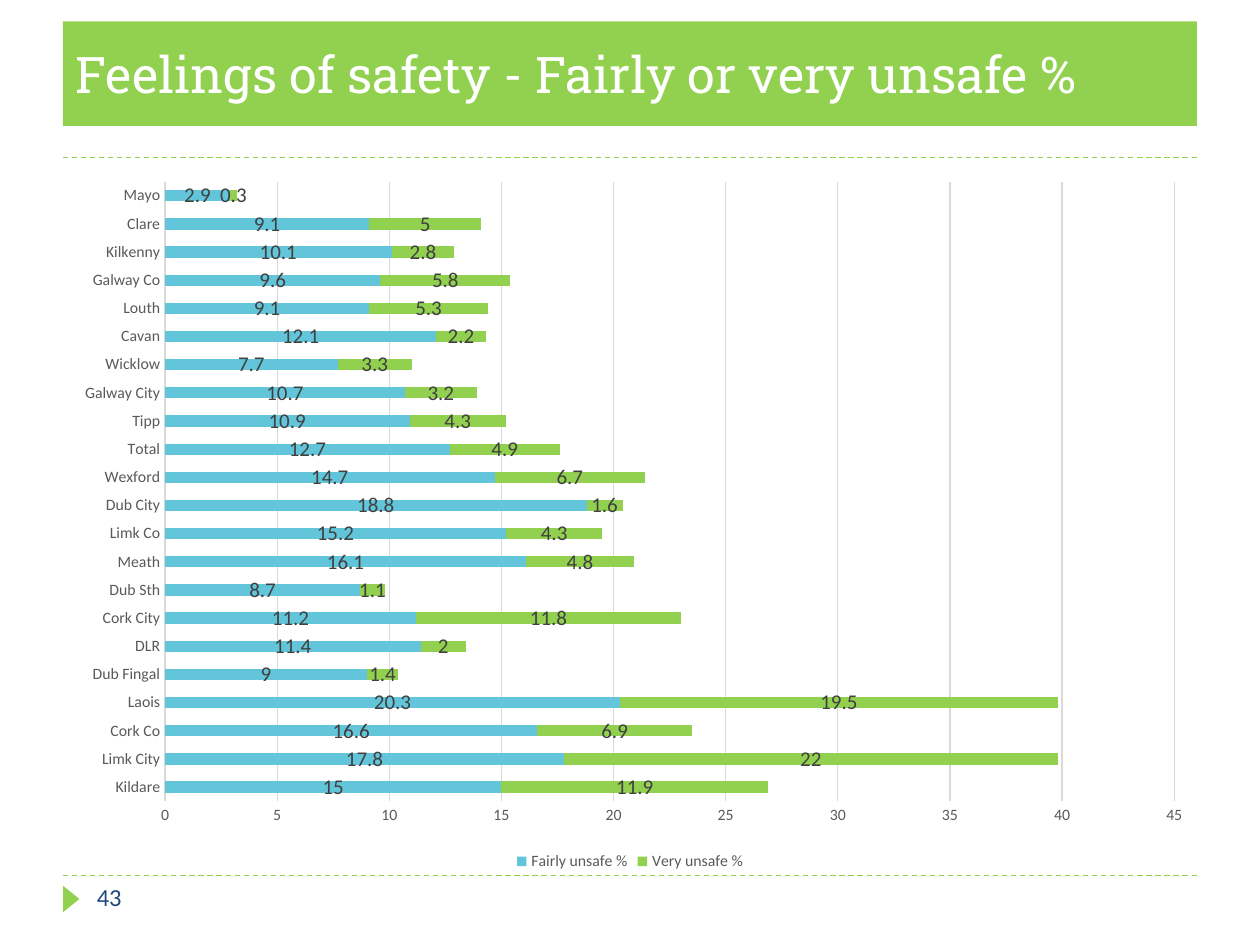
"""Build the slide on feelings of safety by county."""
from typing import NamedTuple

from lxml import etree
from pptx import Presentation
from pptx import util as u
from pptx.chart import data as cd
from pptx.dml import color as col
from pptx.enum import chart as ch, dml, shapes, text
from pptx.oxml import ns

GREEN, BLUE, GREY, PALE = "92D050", "63C5DA", "595959", "D9D9D9"
LEFT, WIDTH = 0.5, 9


class Box(NamedTuple):
    left: float
    top: float
    width: float
    height: float

    def inches(self) -> list:
        return [u.Inches(side) for side in self]


class County(NamedTuple):
    name: str
    fairly: float
    very: float


class Series(NamedTuple):
    name: str
    field: str
    color: str


COUNTIES = [
    County("Kildare", 15, 11.9),
    County("Limk City", 17.8, 22),
    County("Cork Co", 16.6, 6.9),
    County("Laois", 20.3, 19.5),
    County("Dub Fingal", 9, 1.4),
    County("DLR", 11.4, 2),
    County("Cork City", 11.2, 11.8),
    County("Dub Sth", 8.7, 1.1),
    County("Meath", 16.1, 4.8),
    County("Limk Co", 15.2, 4.3),
    County("Dub City", 18.8, 1.6),
    County("Wexford", 14.7, 6.7),
    County("Total", 12.7, 4.9),
    County("Tipp", 10.9, 4.3),
    County("Galway City", 10.7, 3.2),
    County("Wicklow", 7.7, 3.3),
    County("Cavan", 12.1, 2.2),
    County("Louth", 9.1, 5.3),
    County("Galway Co", 9.6, 5.8),
    County("Kilkenny", 10.1, 2.8),
    County("Clare", 9.1, 5),
    County("Mayo", 2.9, 0.3),
]
SERIES = [
    Series("Fairly unsafe %", "fairly", BLUE),
    Series("Very unsafe %", "very", GREEN),
]
PLOT = {"x": 0.09, "y": 0.02, "w": 0.89, "h": 0.875}


def rgb(code: str) -> col.RGBColor:
    return col.RGBColor.from_string(code)


def set_font(font, size: float, color: str, name: str = "Calibri") -> None:
    font.size, font.name, font.bold = u.Pt(size), name, False
    font.color.rgb = rgb(color)


def set_line(line, color: str) -> None:
    line.color.rgb = rgb(color)
    line.width = u.Pt(0.75)


def add_rule(slide, top: float) -> None:
    rule = slide.shapes.add_connector(
        shapes.MSO_CONNECTOR.STRAIGHT, u.Inches(LEFT), u.Inches(top),
        u.Inches(LEFT + WIDTH), u.Inches(top))
    set_line(rule.line, GREEN)
    rule.line.dash_style = dml.MSO_LINE.DASH
    etree.SubElement(rule.element.spPr, ns.qn("a:effectLst"))


def add_solid(slide, kind, box: Box):
    solid = slide.shapes.add_shape(kind, *box.inches())
    solid.shadow.inherit = False
    solid.fill.solid()
    solid.fill.fore_color.rgb = rgb(GREEN)
    solid.line.fill.background()
    return solid


def write(shape, words: str, size: float, color: str, name: str) -> None:
    shape.text_frame.word_wrap = True
    para = shape.text_frame.paragraphs[0]
    para.text = words
    para.alignment = text.PP_ALIGN.LEFT
    set_font(para.font, size, color, name)


def place_plot(chart) -> None:
    area = chart.element.find(".//" + ns.qn("c:plotArea"))
    for old in area.findall(ns.qn("c:layout")):
        area.remove(old)
    layout = etree.Element(ns.qn("c:layout"))
    area.insert(0, layout)
    manual = etree.SubElement(layout, ns.qn("c:manualLayout"))
    rules = {"layoutTarget": "inner", "xMode": "edge", "yMode": "edge", **PLOT}
    for tag, value in rules.items():
        etree.SubElement(manual, ns.qn("c:" + tag)).set("val", str(value))


def style_axis(axis) -> None:
    axis.major_tick_mark = axis.minor_tick_mark = ch.XL_TICK_MARK.NONE
    set_font(axis.tick_labels.font, 9, GREY)


def add_bars(slide, box: Box) -> None:
    data = cd.CategoryChartData()
    data.categories = [county.name for county in COUNTIES]
    for item in SERIES:
        data.add_series(item.name, [getattr(c, item.field) for c in COUNTIES])
    chart = slide.shapes.add_chart(
        ch.XL_CHART_TYPE.BAR_STACKED, *box.inches(), data).chart
    set_font(chart.font, 10, "000000")
    chart.has_title = False
    chart.has_legend = True
    chart.legend.position = ch.XL_LEGEND_POSITION.BOTTOM
    chart.legend.include_in_layout = False
    set_font(chart.legend.font, 9, GREY)

    cats, vals = chart.category_axis, chart.value_axis
    style_axis(cats)
    style_axis(vals)
    set_line(cats.format.line, PALE)
    vals.format.line.fill.background()
    set_line(vals.major_gridlines.format.line, PALE)
    vals.minimum_scale, vals.maximum_scale, vals.major_unit = 0, 45, 5

    plot = chart.plots[0]
    plot.gap_width, plot.overlap, plot.vary_by_categories = 150, 100, False
    for item, bars in zip(SERIES, plot.series):
        bars.format.fill.solid()
        bars.format.fill.fore_color.rgb = rgb(item.color)
        labels = bars.data_labels
        labels.show_value = True
        labels.position = ch.XL_LABEL_POSITION.CENTER
        set_font(labels.font, 12, "404040")
    place_plot(chart)


def main() -> None:
    deck = Presentation()
    deck.slide_width, deck.slide_height = u.Inches(10), u.Inches(7.5)
    slide = deck.slides.add_slide(deck.slide_layouts[6])
    for top in (6.95, 1.25):
        add_rule(slide, top)
    kinds = shapes.MSO_SHAPE
    mark = add_solid(slide, kinds.ISOSCELES_TRIANGLE, Box(0.46, 7.07, 0.21, 0.13))
    mark.rotation = 90
    title = add_solid(slide, kinds.RECTANGLE, Box(LEFT, 0.17, WIDTH, 0.83))
    title.text_frame.vertical_anchor = text.MSO_ANCHOR.MIDDLE
    write(title, "Feelings of safety - Fairly or very unsafe %", 28.8, "FFFFFF",
          "Roboto Slab")
    page = slide.shapes.add_textbox(*Box(0.67, 6.95, 2.17, 0.4).inches())
    write(page, "43", 14, "1F497D", "Calibri")
    add_bars(slide, Box(LEFT, 1.33, WIDTH, 5.62))
    deck.save("out.pptx")


if __name__ == "__main__":
    main()
